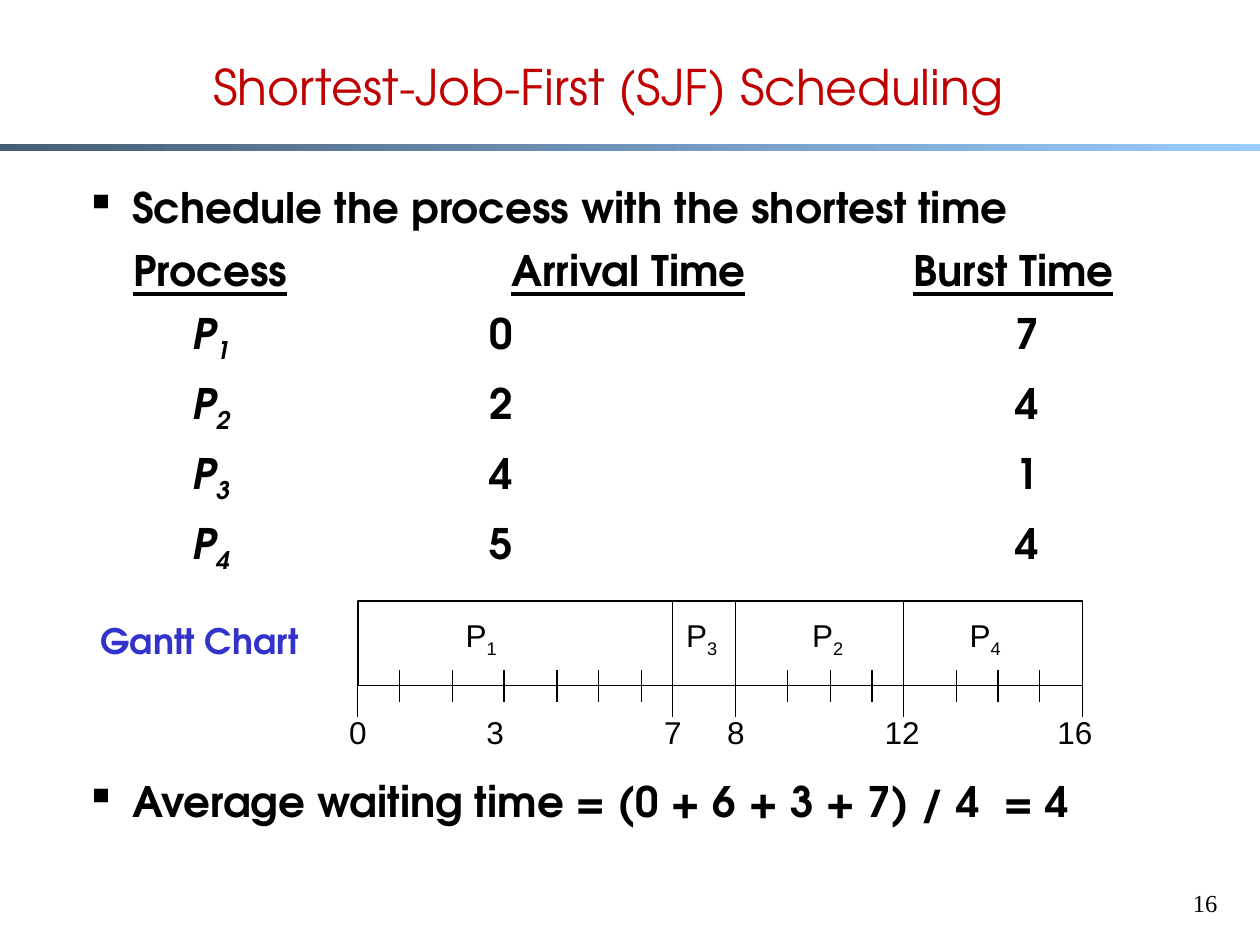
from lxml import etree
from pptx import Presentation
from pptx.dml.color import RGBColor
from pptx.enum.shapes import MSO_CONNECTOR, MSO_SHAPE
from pptx.enum.text import MSO_ANCHOR, PP_ALIGN
from pptx.oxml.ns import qn
from pptx.util import Inches, Pt

LINE = MSO_CONNECTOR.STRAIGHT
RECT = MSO_SHAPE.RECTANGLE
TOP, MIDDLE = MSO_ANCHOR.TOP, MSO_ANCHOR.MIDDLE
LEFT, CENTER, RIGHT = PP_ALIGN.LEFT, PP_ALIGN.CENTER, PP_ALIGN.RIGHT

COLORS = {"title": "C00000", "text": "000000", "gantt": "3333CC",
          "box": "FFFFFF", "band_dark": "475E76", "band_light": "99CCFF"}
HEAD_FONT, LABEL_FONT, PAGE_FONT = "TeX Gyre Adventor", "Arial", "Times New Roman"

TITLE = "Shortest-Job-First (SJF) Scheduling"
RULE = "Schedule the process with the shortest time"
RESULT = "Average waiting time = (0 + 6 + 3 + 7) / 4  = 4"
HEADERS = ["Process", "Arrival Time", "Burst Time"]
HEADER_TABS = [0.38, 3.38, 6.57]
PROCESSES = [("1", "0", "7"), ("2", "2", "4"), ("3", "4", "1"), ("4", "5", "4")]
PROCESS_TABS = [0.85, 3.21, 7.38]

BAR_TOP, BAR_BOTTOM = 4.77, 5.44
BOUNDS = [2.84, 5.34, 5.84, 7.17, 8.59]
TICKS = [3.17, 3.59, 4, 4.42, 4.75, 5.09, 6.25, 6.59, 6.92, 7.59, 7.92, 8.25]
BAR_LABELS = [("1", 3.82), ("3", 5.57), ("2", 6.57), ("4", 7.82)]
TIME_LABELS = [("0", 2.84), ("3", 3.93), ("7", 5.34), ("8", 5.84),
               ("12", 7.16), ("16", 8.53)]


def rgb(name):
    return RGBColor.from_string(COLORS[name])


def add_run(p, text, size, font, color="text", bold=False, sub=False):
    r = p.add_run()
    r.text = text
    r.font.size, r.font.name, r.font.bold = Pt(size), font, bold
    r.font.color.rgb = rgb(color)
    if sub:
        r._r.get_or_add_rPr().set("baseline", "-25000")
    return r


def add_box(s, x, y, w, h, align=LEFT, anchor=TOP, wrap=True):
    tf = s.shapes.add_textbox(Inches(x), Inches(y), Inches(w), Inches(h)).text_frame
    tf.word_wrap, tf.vertical_anchor = wrap, anchor
    tf.paragraphs[0].alignment = align
    return tf


def add_bullet(p):
    pPr = p._p.get_or_add_pPr()
    pPr.set("marL", str(Inches(0.37)))
    pPr.set("indent", str(-Inches(0.37)))
    clr = etree.SubElement(pPr, qn("a:buClr"))
    etree.SubElement(clr, qn("a:srgbClr"), val=COLORS["text"])
    etree.SubElement(pPr, qn("a:buChar"), char="▪")


def add_tabs(p, stops):
    tabs = etree.SubElement(p._p.get_or_add_pPr(), qn("a:tabLst"))
    for x in stops:
        etree.SubElement(tabs, qn("a:tab"), pos=str(Inches(x)), algn="l")


def add_row(tf, stops):
    p = tf.add_paragraph()
    p.space_before = Pt(7.2)
    add_tabs(p, stops)
    return p


def add_line(s, x, y1, y2):
    c = s.shapes.add_connector(LINE, Inches(x), Inches(y1), Inches(x), Inches(y2))
    c.line.color.rgb, c.line.width = rgb("text"), Pt(0.75)
    etree.SubElement(c._element.spPr, qn("a:effectLst"))


def add_header(s):
    band = s.shapes.add_shape(RECT, 0, Inches(1.14), Inches(10), Inches(0.06))
    band.shadow.inherit = False
    band.line.fill.background()
    band.fill.gradient()
    band.fill.gradient_angle = 0
    for stop, name in zip(band.fill.gradient_stops, ("band_dark", "band_light")):
        stop.color.rgb = rgb(name)
    tf = add_box(s, 9.08, 7, 0.68, 0.5, RIGHT)
    add_run(tf.paragraphs[0], "16", 14, PAGE_FONT)
    tf = add_box(s, 0.58, 0.15, 8.5, 1.06, CENTER, MIDDLE)
    add_run(tf.paragraphs[0], TITLE, 28, HEAD_FONT, "title")


def add_body(s):
    def body_run(p, text, sub=False):
        return add_run(p, text, 24, HEAD_FONT, bold=True, sub=sub)

    tf = add_box(s, 0.58, 1.39, 8.5, 5.45)
    p = tf.paragraphs[0]
    p.space_before = Pt(7.2)
    add_bullet(p)
    body_run(p, RULE)
    p = add_row(tf, HEADER_TABS)
    for header in HEADERS:
        body_run(p, "\t")
        body_run(p, header).font.underline = True
    for number, arrival, burst in PROCESSES:
        p = add_row(tf, PROCESS_TABS)
        body_run(p, "\t")
        body_run(p, "P").font.italic = True
        body_run(p, number, sub=True).font.italic = True
        body_run(p, f"\t{arrival}\t{burst}")
    p = tf.add_paragraph()
    p.space_before = Pt(115)
    add_bullet(p)
    body_run(p, RESULT)


def add_gantt(s):
    bar = s.shapes.add_shape(RECT, Inches(BOUNDS[0]), Inches(BAR_TOP),
                             Inches(BOUNDS[-1] - BOUNDS[0]),
                             Inches(BAR_BOTTOM - BAR_TOP))
    bar.shadow.inherit = False
    bar.fill.solid()
    bar.fill.fore_color.rgb = rgb("box")
    bar.line.color.rgb, bar.line.width = rgb("text"), Pt(0.75)
    for x in BOUNDS[1:-1]:
        add_line(s, x, BAR_TOP, BAR_BOTTOM)
    for x in BOUNDS:
        add_line(s, x, BAR_BOTTOM, BAR_BOTTOM + 0.25)
    for x in TICKS:
        add_line(s, x, BAR_BOTTOM - 0.12, BAR_BOTTOM + 0.13)
    for number, x in BAR_LABELS:
        tf = add_box(s, x - 0.23, 4.86, 0.46, 0.4, CENTER, MIDDLE, False)
        add_run(tf.paragraphs[0], "P", 18, LABEL_FONT)
        add_run(tf.paragraphs[0], number, 18, LABEL_FONT, sub=True)
    for time, x in TIME_LABELS:
        w = 0.2 + 0.14 * len(time)
        tf = add_box(s, x - w / 2, 5.61, w, 0.4, CENTER, MIDDLE, False)
        add_run(tf.paragraphs[0], time, 18, LABEL_FONT)
    tf = add_box(s, 0.7, 4.87, 1.96, 0.44)
    add_run(tf.paragraphs[0], "Gantt Chart", 20, HEAD_FONT, "gantt", bold=True)


def main():
    prs = Presentation()
    prs.slide_width, prs.slide_height = Inches(10), Inches(7.5)
    s = prs.slides.add_slide(prs.slide_layouts[6])
    add_header(s)
    add_body(s)
    add_gantt(s)
    prs.save("out.pptx")


if __name__ == "__main__":
    main()
